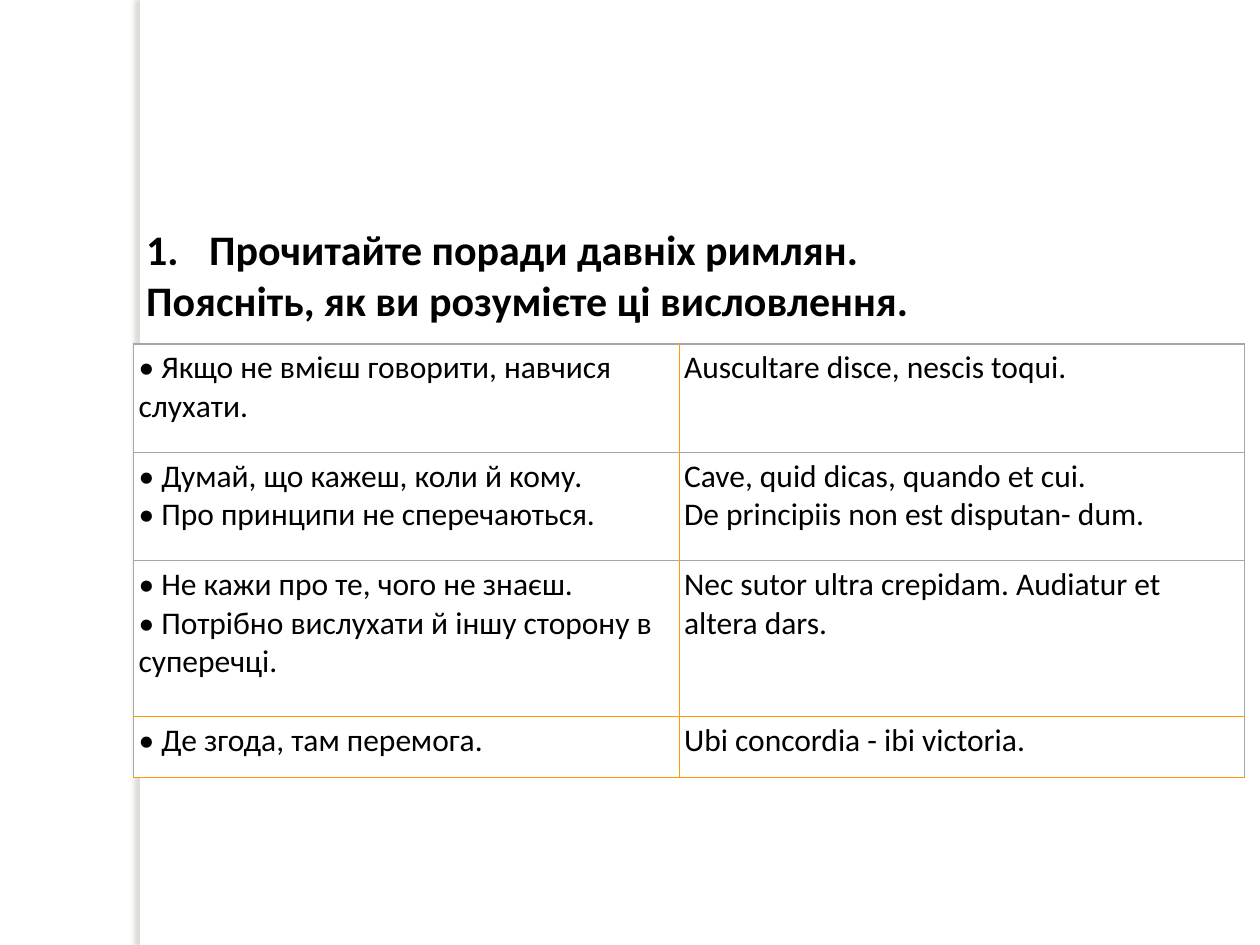
from dataclasses import dataclass

from lxml.etree import SubElement
from pptx import Presentation
from pptx.dml.color import RGBColor
from pptx.enum.shapes import MSO_SHAPE as Shape
from pptx.enum.text import MSO_ANCHOR as Anchor, MSO_AUTO_SIZE as AutoSize, PP_ALIGN as Align
from pptx.oxml.ns import qn
from pptx.util import Inches, Pt


@dataclass(frozen=True)
class Theme:
    """Colours, font and type sizes of the deck."""
    font: str = "Calibri"
    ink: str = "000000"
    paper: str = "FFFFFF"
    shade: str = "736F63"
    accent: str = "FF9900"
    edge: str = "A6A6A6"
    title_size: int = 24
    body_size: int = 18
    rule: float = 0.75


SAYINGS = [
    ("• Якщо не вмієш говорити, навчися слухати.",
     "Auscultare disce, nescis toqui."),
    ("• Думай, що кажеш, коли й кому.\n• Про принципи не сперечаються.",
     "Cave, quid dicas, quando et cui.\nDe principiis non est disputan- dum."),
    ("• Не кажи про те, чого не знаєш.\n• Потрібно вислухати й іншу сторону в суперечці.",
     "Neс sutor ultra crepidam. Audiatur et altera dars."),
    ("• Де згода, там перемога.",
     "Ubi concordia - ibi victoria."),
]
TITLE = "Прочитайте поради давніх римлян.\nПоясніть, як ви розумієте ці висловлення."


class PageBuilder:
    """Draws styled elements on one page."""

    def __init__(self, page, theme):
        """Keep the page and its theme."""
        self.page, self.theme = page, theme

    def style(self, para, size, bold=False):
        """Set the font of a paragraph."""
        font = para.font
        font.name, font.size, font.bold = self.theme.font, Pt(size), bold
        font.color.rgb = RGBColor.from_string(self.theme.ink)

    def fill(self, target, colour):
        """Give a shape or cell a solid fill."""
        target.fill.solid()
        target.fill.fore_color.rgb = RGBColor.from_string(colour)

    def strip(self, left, top, width, height):
        """Add a vertical strip with a soft shadow on its left."""
        strip = self.page.shapes.add_shape(
            Shape.RECTANGLE, Inches(left), Inches(top), Inches(width), Inches(height))
        self.fill(strip, self.theme.paper)
        strip.line.fill.background()
        strip.shadow.inherit = False
        effects = strip._element.spPr.find(qn("a:effectLst"))
        shadow = SubElement(effects, qn("a:outerShdw"), blurRad=str(Pt(3)), dist=str(Pt(3)),
                            dir="10800000", algn="r", rotWithShape="0")
        colour = SubElement(shadow, qn("a:srgbClr"), val=self.theme.shade)
        SubElement(colour, qn("a:alpha"), val="25000")

    def title(self, text, left, top, width, height):
        """Place the title and number its first paragraph."""
        box = self.page.shapes.title
        box.left, box.top = Inches(left), Inches(top)
        box.width, box.height = Inches(width), Inches(height)
        frame = box.text_frame
        frame.text = text
        frame.word_wrap = True
        frame.vertical_anchor = Anchor.MIDDLE
        frame.auto_size = AutoSize.SHAPE_TO_FIT_TEXT
        first = frame.paragraphs[0]._p.get_or_add_pPr()
        first.set("marL", str(Inches(0.5)))
        first.set("indent", str(-Inches(0.5)))
        SubElement(first, qn("a:buFont"), typeface="+mj-lt")
        SubElement(first, qn("a:buAutoNum"), type="arabicPeriod")
        for para in frame.paragraphs:
            para.alignment = Align.JUSTIFY
            self.style(para, self.theme.title_size, bold=True)

    def borders(self, cell, colours):
        """Draw the left, right, top and bottom borders of a cell."""
        properties = cell._tc.get_or_add_tcPr()
        for side, colour in zip("LRTB", colours):
            line = SubElement(properties, qn(f"a:ln{side}"), w=str(Pt(self.theme.rule)))
            SubElement(SubElement(line, qn("a:solidFill")), qn("a:srgbClr"), val=colour)

    def table(self, rows, left, top, widths, heights):
        """Add a plain two-column table with ruled cells."""
        table = self.page.shapes.add_table(
            len(rows), len(widths), Inches(left), Inches(top),
            Inches(sum(widths)), Inches(sum(heights))).table
        table.first_row = table.horz_banding = False
        for column, width in zip(table.columns, widths):
            column.width = Inches(width)
        edge, accent = self.theme.edge, self.theme.accent
        across = [edge] * (len(rows) - 1) + [accent] * 2
        down = [edge, accent, edge]
        for i, (texts, height) in enumerate(zip(rows, heights)):
            table.rows[i].height = Inches(height)
            for j, text in enumerate(texts):
                cell = table.cell(i, j)
                self.borders(cell, (down[j], down[j + 1], across[i], across[i + 1]))
                self.fill(cell, self.theme.paper)
                cell.margin_left = cell.margin_right = Inches(0.04)
                cell.margin_top = cell.margin_bottom = Inches(0.04)
                cell.text = text
                for para in cell.text_frame.paragraphs:
                    self.style(para, self.theme.body_size)


def main():
    """Build and save the deck."""
    deck = Presentation()
    deck.slide_width, deck.slide_height = Inches(10), Inches(7.5)
    builder = PageBuilder(deck.slides.add_slide(deck.slide_layouts[5]), Theme())
    builder.strip(1.11, 0, 0.08, 7.5)
    builder.table(SAYINGS, 1.06, 2.73, (4.33, 4.49), (0.86, 0.86, 1.24, 0.48))
    builder.title(TITLE, 1.06, 1.72, 8.94, 0.91)
    shapes = builder.page.shapes
    shapes._spTree.append(shapes.title._element)
    deck.save("out.pptx")


if __name__ == "__main__":
    main()
